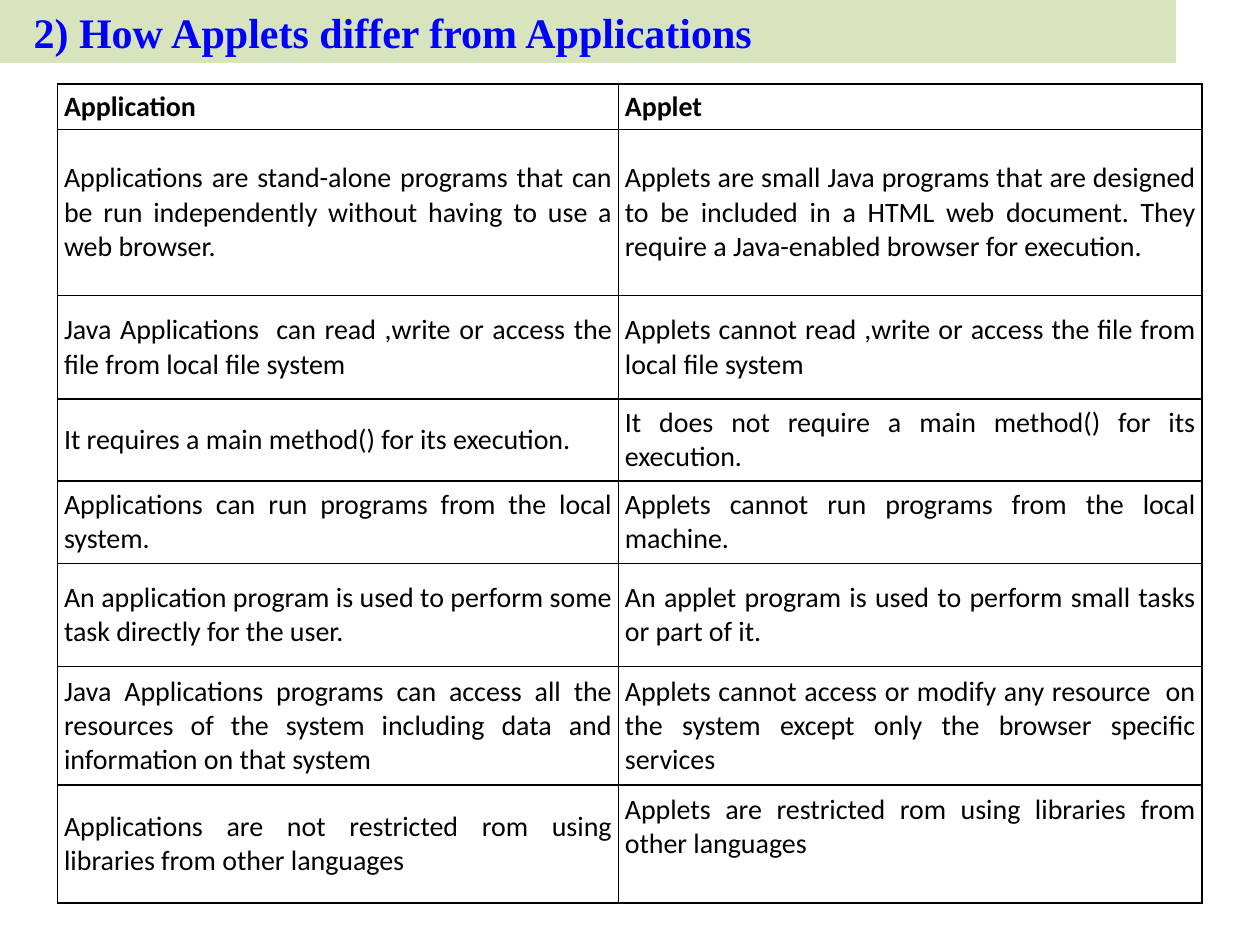
"""Build a slide that compares Java applications with applets in a table."""
from lxml.etree import SubElement
from pptx import Presentation
from pptx.dml.color import RGBColor
from pptx.enum.shapes import MSO_SHAPE as Shape
from pptx.enum.text import MSO_ANCHOR as Anchor, PP_ALIGN as Align
from pptx.oxml.ns import qn
from pptx.util import Pt

COMPARISON = [
    ("Application", "Applet"),
    ("Applications are stand-alone programs that can be run independently without having to use a web browser.",
     "Applets are small Java programs that are designed to be included in a HTML web document. "
     "They require a Java-enabled browser for execution."),
    ("Java Applications  can read ,write or access the file from local file system",
     "Applets cannot read ,write or access the file from local file system"),
    ("It requires a main method() for its execution.",
     "It does not require a main method() for its execution."),
    ("Applications can run programs from the local system.",
     "Applets cannot run programs from the local machine."),
    ("An application program is used to perform some task directly for the user.",
     "An applet program is used to perform small tasks or part of it."),
    ("Java Applications programs can access all the resources of the system including data "
     "and information on that system",
     "Applets cannot access or modify any resource  on the system except only the browser specific services"),
    ("Applications are not restricted rom using libraries from other languages",
     "Applets are restricted rom using libraries from other languages"),
]
COLUMN_WIDTHS = [320.5, 333.5]
ROW_HEIGHTS = [26, 95, 59, 47, 47, 59, 67.5, 67.5]


def color(value):
    return RGBColor.from_string(value)


def write(frame, text, size=16, font="Calibri", ink="000000", bold=False, align=Align.JUSTIFY):
    paragraph = frame.paragraphs[0]
    paragraph.alignment = align
    run = paragraph.add_run()
    run.text = text
    run.font.size, run.font.name, run.font.bold = Pt(size), font, bold
    run.font.color.rgb = color(ink)


class ComparisonSlide:
    """Holds the style and the current slide, and draws each kind of element."""
    banner_fill = "D7E4BD"
    title_ink = "0000FF"
    rule = "000000"

    def __init__(self, deck):
        self.slide = deck.slides.add_slide(deck.slide_layouts[6])

    def banner(self, title, width, height, indent):
        band = self.slide.shapes.add_shape(Shape.RECTANGLE, 0, 0, Pt(width), Pt(height))
        band.shadow.inherit = False
        band.fill.solid()
        band.fill.fore_color.rgb = color(self.banner_fill)
        band.line.fill.background()
        frame = band.text_frame
        frame.word_wrap = True
        frame.vertical_anchor = Anchor.MIDDLE
        frame.margin_left = Pt(indent)
        write(frame, title, size=24, font="Times New Roman", ink=self.title_ink, bold=True, align=Align.LEFT)

    def table(self, rows, left, top, widths, heights):
        grid = self.slide.shapes.add_table(len(rows), len(widths), Pt(left), Pt(top),
                                           Pt(sum(widths)), Pt(sum(heights))).table
        for column, width in zip(grid.columns, widths):
            column.width = Pt(width)
        for row, height in zip(grid.rows, heights):
            row.height = Pt(height)
        for r, texts in enumerate(rows):
            for c, text in enumerate(texts):
                self.cell(grid.cell(r, c), text, bold=r == 0)
        return grid

    def cell(self, cell, text, bold):
        cell.margin_left = cell.margin_right = Pt(3.6)
        cell.margin_top = cell.margin_bottom = Pt(2)
        cell.vertical_anchor = Anchor.MIDDLE
        write(cell.text_frame, text, bold=bold)
        properties = cell._tc.get_or_add_tcPr()
        for side in ("lnL", "lnR", "lnT", "lnB"):
            border = SubElement(properties, qn(f"a:{side}"), w=str(Pt(1)))
            fill = SubElement(border, qn("a:solidFill"))
            SubElement(fill, qn("a:srgbClr"), val=self.rule)
        cell.fill.background()


def main():
    deck = Presentation()
    deck.slide_width, deck.slide_height = Pt(720), Pt(540)
    page = ComparisonSlide(deck)
    page.banner("2) How Applets differ from Applications", width=672, height=36, indent=19.2)
    comparison = page.table(COMPARISON, 33, 48, COLUMN_WIDTHS, ROW_HEIGHTS)
    comparison.cell(len(COMPARISON) - 1, 1).margin_bottom = Pt(21.5)
    deck.save("out.pptx")


if __name__ == "__main__":
    main()
